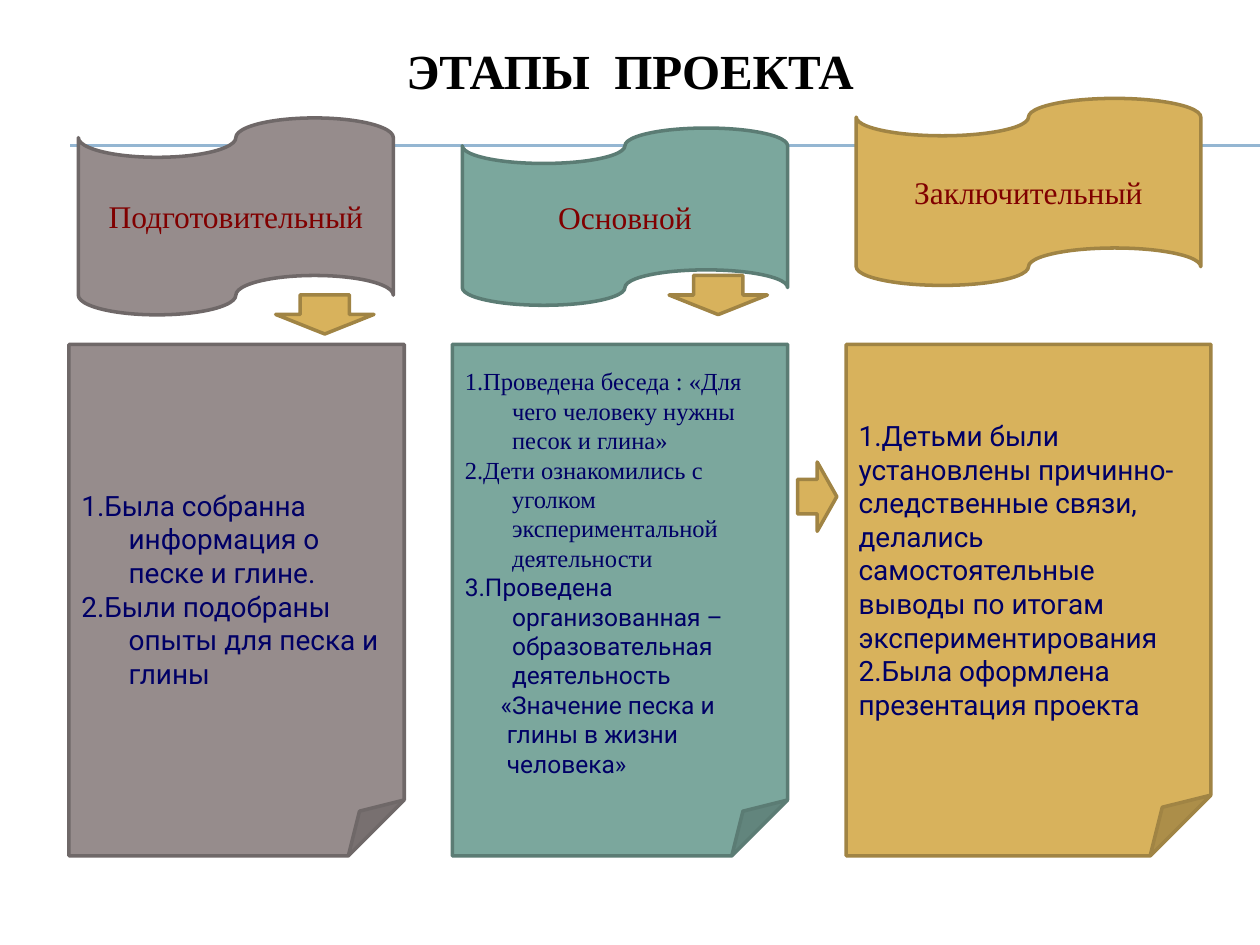
from dataclasses import dataclass

from pptx import Presentation
from pptx.dml.color import RGBColor
from pptx.enum.shapes import MSO_CONNECTOR, MSO_SHAPE
from pptx.enum.text import MSO_ANCHOR, PP_ALIGN
from pptx.oxml.ns import qn
from pptx.util import Pt
from lxml import etree

TAPE = MSO_SHAPE.FLOWCHART_PUNCHED_TAPE
CARD = MSO_SHAPE.FOLDED_CORNER
DOWN, RIGHT = MSO_SHAPE.DOWN_ARROW, MSO_SHAPE.RIGHT_ARROW
STRAIGHT = MSO_CONNECTOR.STRAIGHT
MIDDLE = MSO_ANCHOR.MIDDLE
LEFT, CENTER = PP_ALIGN.LEFT, PP_ALIGN.CENTER


@dataclass(frozen=True)
class Theme:
    # (fill, outline) pairs
    grey: tuple = ("968C8C", "6F6868")
    green: tuple = ("7BA79D", "5B7C74")
    gold: tuple = ("D8B25C", "A08444")
    rule: str = "94B6D2"
    title: str = "000000"
    heading: str = "800000"
    body: str = "000066"
    serif: str = "Times New Roman"
    sans: str = "Roboto"
    title_size: int = 28
    heading_size: int = 18
    body_size: int = 16
    small_size: int = 14
    outline: int = 2


T = Theme()
HANG = 27  # hanging indent of numbered items


def rgb(value):
    return RGBColor.from_string(value)


def write(p, text, *, size, color, font=T.serif, bold=False,
          align=LEFT, margin=0, hang=0):
    p.alignment = align
    pPr = p._p.get_or_add_pPr()
    pPr.set("marL", str(Pt(margin)))
    pPr.set("indent", str(Pt(-hang)))
    r = p.add_run()
    r.text = text
    r.font.name, r.font.size, r.font.bold = font, Pt(size), bold
    r.font.color.rgb = rgb(color)


def add_shape(s, kind, x, y, w, h, colors):
    sp = s.shapes.add_shape(kind, Pt(x), Pt(y), Pt(w), Pt(h))
    sp.shadow.inherit = False
    sp.fill.solid()
    sp.fill.fore_color.rgb = rgb(colors[0])
    sp.line.color.rgb = rgb(colors[1])
    sp.line.width = Pt(T.outline)
    sp.text_frame.word_wrap = True
    sp.text_frame.vertical_anchor = MIDDLE
    return sp


def add_header(s, x, y, w, h):
    """Title, with the double rule below it running to the slide edge."""
    for dy in (70.6, 71.3):
        line = s.shapes.add_connector(STRAIGHT, Pt(x + 4.3), Pt(y + dy),
                                      Pt(720), Pt(y + dy))
        line.line.color.rgb = rgb(T.rule)
        line.line.width = Pt(0.75)
        etree.SubElement(line._element.spPr, qn("a:effectLst"))
    title = s.shapes.title
    title.left, title.top, title.width, title.height = map(Pt, (x, y, w, h))
    tf = title.text_frame
    tf.vertical_anchor = MIDDLE
    write(tf.paragraphs[0], "ЭТАПЫ  ПРОЕКТА", size=T.title_size,
          color=T.title, bold=True, align=CENTER)


def add_stage(s, x, y, w, h, *, heading, colors, tape, items, size, top=3.6):
    """Heading tape over a folded card; tape is relative to the column box."""
    dx, dy, tw, th = tape
    banner = add_shape(s, TAPE, x + dx, y + dy, tw, th, colors)
    write(banner.text_frame.paragraphs[0], heading, size=T.heading_size,
          color=T.heading, align=CENTER)

    card_h = 292.3
    card = add_shape(s, CARD, x, y + h - card_h, w, card_h, colors)
    tf = card.text_frame
    tf.margin_top = Pt(top)
    for i, (text, fmt) in enumerate(items):
        p = tf.add_paragraph() if i else tf.paragraphs[0]
        write(p, text, size=size, color=T.body, **fmt)


def add_arrows(s, x, y):
    """Arrows that lead from one stage to the next."""
    for kind, dx, dy, w, h in ((DOWN, 157.5, 112.3, 56.2, 22.4),
                               (DOWN, 382.3, 101.2, 56.2, 22.4),
                               (RIGHT, 455.8, 207.8, 22.4, 39.6)):
        add_shape(s, kind, x + dx, y + dy, w, h, T.gold)


def main():
    prs = Presentation()
    prs.slide_width, prs.slide_height = Pt(720), Pt(540)
    s = prs.slides.add_slide(prs.slide_layouts[5])
    add_header(s, 36, 12.2, 648, 55.4)

    serif = dict(margin=HANG, hang=HANG)
    sans = dict(font=T.sans, margin=HANG, hang=HANG)
    plain = dict(font=T.sans)
    top, height = 56.2, 432.9

    add_stage(s, 39.4, top, 191.6, height, heading="Подготовительный",
              colors=T.grey, tape=(5.4, 11.2, 180, 112.5),
              size=T.body_size, top=22.8, items=[
                  ("1.Была собранна информация о песке и глине.", sans),
                  ("2.Были подобраны опыты для песка и глины", sans)])
    add_stage(s, 258.5, top, 191.6, height, heading="Основной",
              colors=T.green, tape=(5.7, 17, 185.9, 101.3),
              size=T.small_size, items=[
                  ("1.Проведена беседа : «Для чего человеку нужны "
                   "песок и глина»", serif),
                  ("2.Дети ознакомились с уголком экспериментальной "
                   "деятельности", serif),
                  ("3.Проведена организованная –образовательная "
                   "деятельность", sans),
                  ("«Значение песка и", dict(font=T.sans, margin=20.5)),
                  ("глины в жизни", dict(font=T.sans, margin=24)),
                  ("человека»", dict(font=T.sans, margin=24))])
    add_stage(s, 483.6, top, 208.4, height, heading="Заключительный",
              colors=T.gold, tape=(5.7, 0, 196.9, 106.9),
              size=T.body_size, items=[
                  ("1.Детьми были установлены причинно-следственные связи, "
                   "делались самостоятельные выводы по итогам "
                   "экспериментирования", plain),
                  ("2.Была оформлена презентация проекта", plain)])
    add_arrows(s, 0, top)
    prs.save("out.pptx")


if __name__ == "__main__":
    main()
